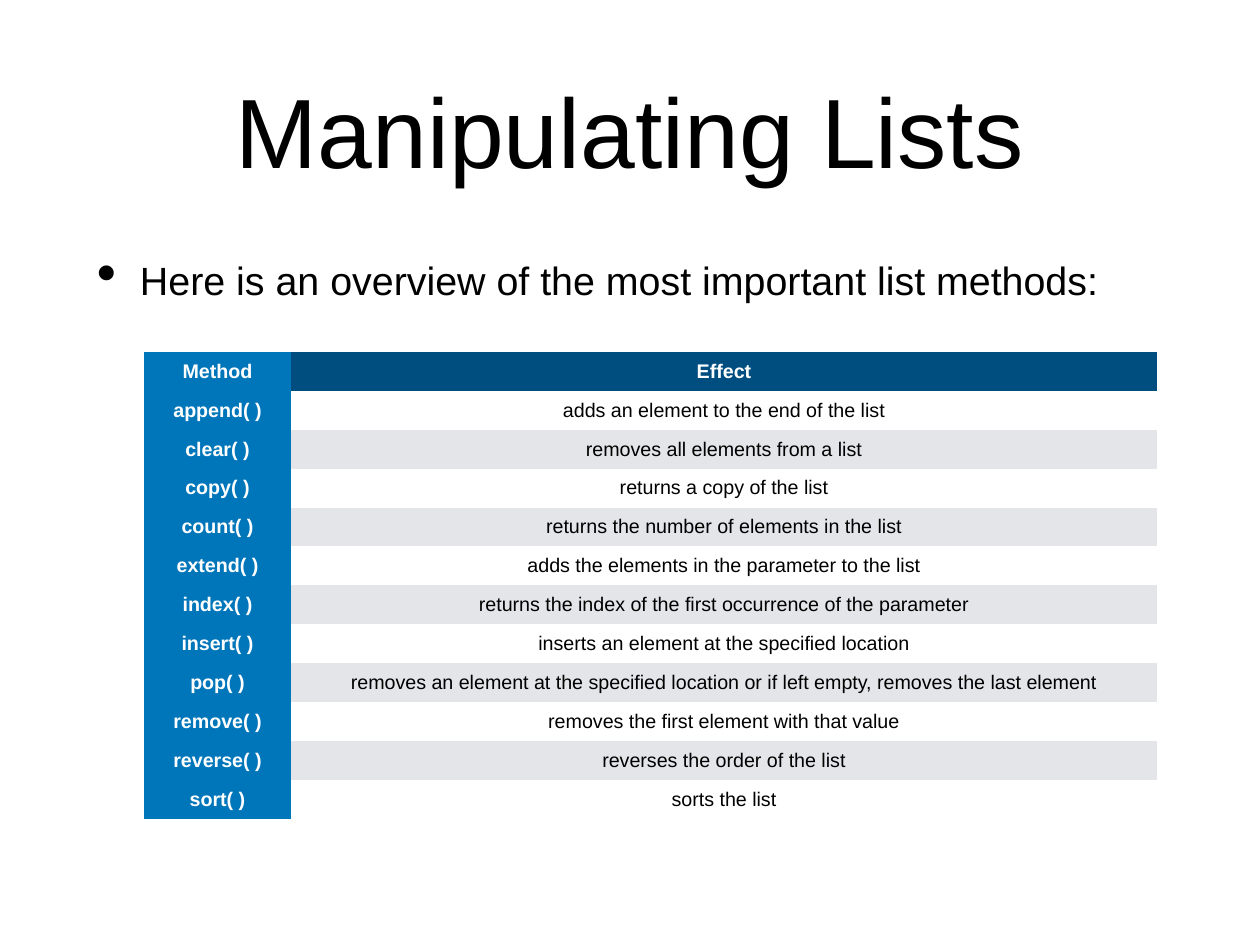
from dataclasses import dataclass

from lxml import etree
from pptx import Presentation
from pptx.dml.color import RGBColor
from pptx.enum.text import MSO_ANCHOR, MSO_AUTO_SIZE, PP_ALIGN
from pptx.oxml.ns import qn
from pptx.util import Pt

LEFT, CENTER = PP_ALIGN.LEFT, PP_ALIGN.CENTER
TOP, MIDDLE = MSO_ANCHOR.TOP, MSO_ANCHOR.MIDDLE
NO_FIT = MSO_AUTO_SIZE.NONE
EMU_PER_PX = 10320
TITLE_ONLY = 5

METHODS = [
    ("Method", "Effect"),
    ("append( )", "adds an element to the end of the list"),
    ("clear( )", "removes all elements from a list"),
    ("copy( )", "returns a copy of the list"),
    ("count( )", "returns the number of elements in the list"),
    ("extend( )", "adds the elements in the parameter to the list"),
    ("index( )", "returns the index of the first occurrence of the parameter"),
    ("insert( )", "inserts an element at the specified location"),
    ("pop( )", "removes an element at the specified location or if left empty, "
               "removes the last element"),
    ("remove( )", "removes the first element with that value"),
    ("reverse( )", "reverses the order of the list"),
    ("sort( )", "sorts the list"),
]


@dataclass(frozen=True)
class Theme:
    """Colours, font and type sizes of the slide."""
    font: str = "Arial"
    ink: str = "000000"
    paper: str = "FFFFFF"
    header: str = "004D80"
    method: str = "0076BA"
    band: str = "E3E5E8"
    title_size: int = 80
    body_size: int = 32
    table_size: int = 16
    inset: int = 5


def px(n):
    """Turn pixels into EMU."""
    return n * EMU_PER_PX


def write(tf, text, *, font, size, color, bold=False, align=LEFT):
    """Put one formatted run into a text frame and return its paragraph."""
    p = tf.paragraphs[0]
    p.alignment = align
    r = p.add_run()
    r.text = text
    r.font.name = font
    r.font.size = Pt(size)
    r.font.bold = bold
    r.font.color.rgb = RGBColor.from_string(color)
    return p


class Deck:
    """Draw elements on the current slide in one theme."""

    def __init__(self, prs, theme):
        """Add a title-only slide on a plain background."""
        self.theme = theme
        self.s = prs.slides.add_slide(prs.slide_layouts[TITLE_ONLY])
        fill = self.s.background.fill
        fill.solid()
        fill.fore_color.rgb = RGBColor.from_string(theme.paper)

    def set_insets(self, obj):
        """Give a text frame or a cell the theme's margins."""
        obj.margin_left = obj.margin_right = px(self.theme.inset)
        obj.margin_top = obj.margin_bottom = px(self.theme.inset)

    def set_frame(self, tf, anchor):
        """Set wrapping, margins and anchor of a text frame."""
        tf.word_wrap = True
        tf.auto_size = NO_FIT
        tf.vertical_anchor = anchor
        self.set_insets(tf)

    def title(self, text, x, y, w, h):
        """Place and fill the title placeholder."""
        t, sp = self.theme, self.s.shapes.title
        sp.left, sp.top, sp.width, sp.height = map(px, (x, y, w, h))
        self.set_frame(sp.text_frame, MIDDLE)
        write(sp.text_frame, text, font=t.font, size=t.title_size,
              color=t.ink, align=CENTER)

    def bullet(self, text, x, y, w, h, indent):
        """Add a text box with one bulleted paragraph."""
        t = self.theme
        sp = self.s.shapes.add_textbox(*map(px, (x, y, w, h)))
        self.set_frame(sp.text_frame, TOP)
        p = write(sp.text_frame, text, font=t.font, size=t.body_size, color=t.ink)
        pPr = p._p.get_or_add_pPr()
        pPr.set("marL", str(px(indent)))
        pPr.set("indent", str(-px(indent)))
        etree.SubElement(pPr, qn("a:buSzPct"), val="145000")
        etree.SubElement(pPr, qn("a:buChar"), char="•")

    def table(self, rows, x, y, widths, h):
        """Add a centred table with a header row, a method column and bands."""
        t = self.theme
        box = map(px, (x, y, sum(widths), h))
        table = self.s.shapes.add_table(len(rows), len(widths), *box).table
        table.first_col = True
        for column, width in zip(table.columns, widths):
            column.width = px(width)
        for i, row in enumerate(rows):
            for j, text in enumerate(row):
                heading = i == 0 or j == 0
                if j == 0:
                    fill = t.method
                elif i == 0:
                    fill = t.header
                else:
                    fill = t.paper if i % 2 else t.band
                self.cell(table.cell(i, j), text, fill, heading)

    def cell(self, cell, text, fill, heading):
        """Fill and format one table cell."""
        t = self.theme
        cell.fill.solid()
        cell.fill.fore_color.rgb = RGBColor.from_string(fill)
        cell.vertical_anchor = MIDDLE
        self.set_insets(cell)
        for side in ("a:lnL", "a:lnR", "a:lnT", "a:lnB"):
            ln = etree.Element(qn(side), w="0")
            etree.SubElement(ln, qn("a:noFill"))
            cell._tc.tcPr.find(qn("a:solidFill")).addprevious(ln)
        write(cell.text_frame, text, font=t.font, size=t.table_size,
              color=t.paper if heading else t.ink, bold=heading, align=CENTER)


def main():
    """Build the slide and save it."""
    prs = Presentation()
    prs.slide_width, prs.slide_height = px(1260), px(945)
    deck = Deck(prs, Theme())
    deck.title("Manipulating Lists", 92, 25, 1076, 209)
    deck.bullet("Here is an overview of the most important list methods:",
                92, 251, 1076, 610, indent=43)
    deck.table(METHODS, 144, 352, (147, 866), 467)
    prs.save("out.pptx")


if __name__ == "__main__":
    main()
